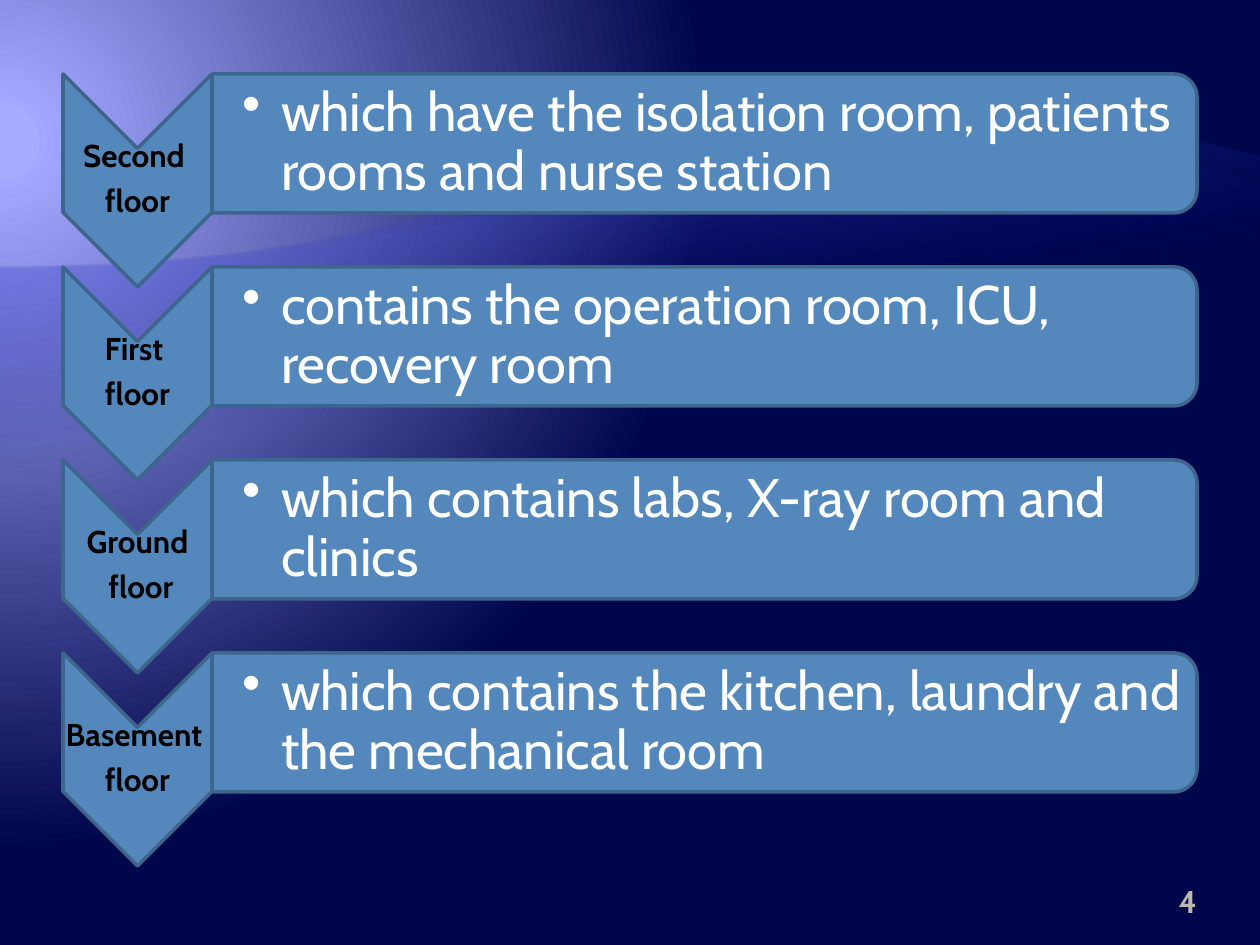
"""Build the slide listing what each hospital floor contains."""
from lxml import etree
from pptx import Presentation, util as u
from pptx.dml.color import RGBColor
from pptx.enum import shapes as sh, text as tx
from pptx.oxml import ns

PX = 7257
BLUE = RGBColor(0x54, 0x88, 0xBC)
EDGE = RGBColor(0x3E, 0x65, 0x8B)
BLACK = RGBColor(0, 0, 0)
WHITE = RGBColor(255, 255, 255)
SAND = RGBColor(0xBD, 0xB8, 0xA9)


def blend(node, stops, way):
    """Swap the solid fill inside node for a gradient."""
    solid = node.find(".//" + ns.qn("a:solidFill"))
    marks = "".join(
        f'<a:gs pos="{at * 1000}"><a:srgbClr val="{tint}">'
        f'<a:alpha val="{alpha * 1000}"/></a:srgbClr></a:gs>'
        for at, tint, alpha in stops)
    xml = f'<a:gradFill {ns.nsdecls("a")}><a:gsLst>{marks}</a:gsLst>{way}</a:gradFill>'
    solid.getparent().replace(solid, etree.fromstring(xml))


def write(box, lines, size, color, bold, align, anchor, pads):
    """Add a text box and return its paragraphs."""
    frame = slide.shapes.add_textbox(*[n * PX for n in box]).text_frame
    frame.word_wrap = True
    frame.vertical_anchor = anchor
    (frame.margin_left, frame.margin_top,
     frame.margin_right, frame.margin_bottom) = [n * PX for n in pads]
    frame.text = "\n".join(lines)
    for para in frame.paragraphs:
        para.alignment = align
        para.font.name = "Cabin"
        para.font.size = u.Pt(size)
        para.font.bold = bold
        para.font.color.rgb = color
    return frame.paragraphs


deck = Presentation()
deck.slide_width, deck.slide_height = 1260 * PX, 945 * PX
slide = deck.slides.add_slide(deck.slide_layouts[6])

slide.background.fill.solid()
blend(slide.element, [(5, "A8ACFF", 100), (5, "A3A7FF", 100), (90, "00064B", 100)],
      '<a:path path="circle"><a:fillToRect l="20000" t="30000" r="135000" b="100000"/></a:path>')

WAVES = [
    ([(0, 268), (630, 268), (673, 6), (1260, 157)], 924, "797FFF", 55),
    ([(0, 268), (630, 268), (753, 39), (1260, 185)], 803, "A3A7FF", 30),
]
STEPS = 60
for curve, base, tint, alpha in WAVES:
    points = []
    for step in range(STEPS + 1):
        t = step / STEPS
        parts = ((1 - t) ** 3, 3 * t * (1 - t) ** 2, 3 * t * t * (1 - t), t ** 3)
        points.append([sum(w * p[axis] for w, p in zip(parts, curve)) for axis in (0, 1)])
    pen = slide.shapes.build_freeform(1260, base, scale=PX)
    pen.add_line_segments([(0, base)] + points, close=True)
    wave = pen.convert_to_shape()
    wave.shadow.inherit = False
    wave.line.fill.background()
    wave.fill.solid()
    blend(wave.element, [(65, "000D9E", 0), (100, tint, alpha)],
          '<a:lin ang="15600000" scaled="0"/>')

FLOORS = [
    (["Second ", "floor"], "which have the isolation room, patients rooms and nurse station"),
    (["First ", "floor"], "contains the operation room, ICU, recovery room"),
    (["Ground", " floor"], "which contains labs, X-ray room and clinics"),
    (["Basement ", "floor"], "which contains the kitchen, laundry and the mechanical room"),
]
PITCH = 193
for row, (name, rooms) in enumerate(FLOORS):
    top = row * PITCH
    for kind, x, y, wide, high in (
            (sh.MSO_SHAPE.CHEVRON, 31, 106, 213, 149),
            (sh.MSO_SHAPE.ROUND_2_SAME_RECTANGLE, 635, -349, 139, 985)):
        shape = slide.shapes.add_shape(kind, x * PX, (y + top) * PX, wide * PX, high * PX)
        shape.rotation = 90
        shape.shadow.inherit = False
        shape.fill.solid()
        shape.fill.fore_color.rgb = BLUE
        shape.line.color.rgb = EDGE
        shape.line.width = u.Pt(2)
    for para in write((63, 148 + top, 149, 64), name, 18, BLACK, True,
                      tx.PP_ALIGN.CENTER, tx.MSO_ANCHOR.MIDDLE, (1, 1, 1, 1)):
        para.line_spacing = 0.9
        para.space_after = u.Pt(6.3)
    for para in write((212, 81 + top, 978, 125), [rooms], 31, WHITE, False,
                      tx.PP_ALIGN.LEFT, tx.MSO_ANCHOR.MIDDLE, (30, 2, 2, 2)):
        para.line_spacing = 0.9
        para.space_after = u.Pt(4.65)
        props = para.font.fill and para._p.get_or_add_pPr()
        props.set("marL", str(39 * PX))
        props.set("indent", str(-39 * PX))
        dot = etree.Element(ns.qn("a:buChar"), char="•")
        props.find(ns.qn("a:defRPr")).addprevious(dot)

write((1124, 876, 73, 50), ["4"], 18, SAND, True,
      tx.PP_ALIGN.RIGHT, tx.MSO_ANCHOR.BOTTOM, (13, 6, 0, 6))

deck.save("out.pptx")
